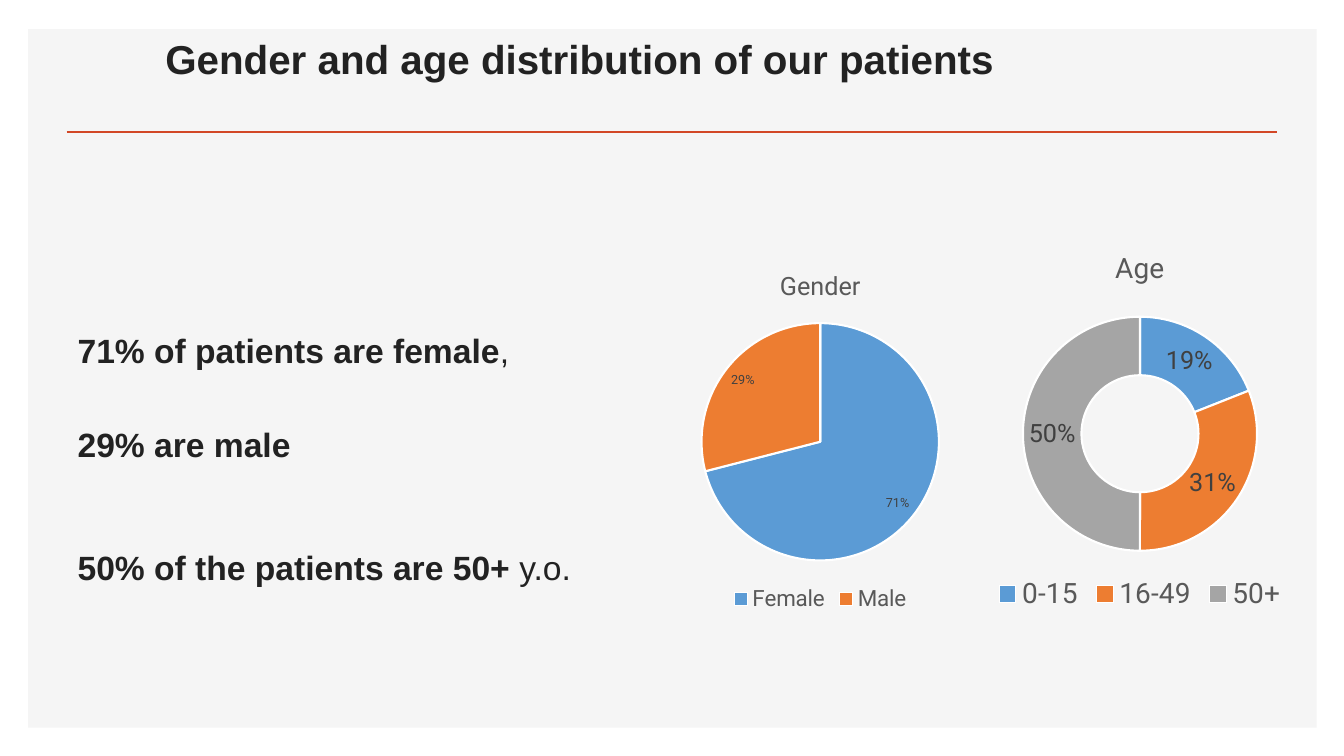
from lxml import etree
from pptx import Presentation
from pptx.chart.data import CategoryChartData
from pptx.dml.color import RGBColor
from pptx.enum.chart import XL_CHART_TYPE as ChartType
from pptx.enum.chart import XL_LABEL_POSITION as LabelPosition
from pptx.enum.chart import XL_LEGEND_POSITION as LegendPosition
from pptx.enum.shapes import MSO_CONNECTOR as Connector
from pptx.enum.shapes import MSO_SHAPE as Shape
from pptx.enum.text import MSO_ANCHOR as Anchor
from pptx.oxml.ns import qn
from pptx.util import Inches, Pt

PANEL = RGBColor(0xF5, 0xF5, 0xF5)
RULE = RGBColor(0xD2, 0x47, 0x26)
INK = RGBColor(0x22, 0x22, 0x22)
BLACK = RGBColor(0, 0, 0)
WHITE = RGBColor(0xFF, 0xFF, 0xFF)
CAPTION = RGBColor(0x59, 0x59, 0x59)
LABEL = RGBColor(0x40, 0x40, 0x40)
SLICES = [
    RGBColor(0x5B, 0x9B, 0xD5),
    RGBColor(0xED, 0x7D, 0x31),
    RGBColor(0xA5, 0xA5, 0xA5),
]

FINDINGS = [
    ("71% of patients are female", ",", 24),
    ("29% are male", "", 45),
    ("50% of the patients are 50+ ", "y.o.", 0),
]
AGE = {
    "title": "Age",
    "kind": ChartType.DOUGHNUT,
    "shares": {"0-15": 0.19, "16-49": 0.31, "50+": 0.5},
    "sizes": {"title": 20, "legend": 20, "labels": 18},
    "label_position": None,
}
GENDER = {
    "title": "Gender",
    "kind": ChartType.PIE,
    "shares": {"Female": 0.71, "Male": 0.29},
    "sizes": {"title": 18, "legend": 16, "labels": 9},
    "label_position": LabelPosition.INSIDE_END,
}


def style_font(font, size, color, name="Arial", bold=False):
    font.color.rgb = color
    for key, value in {"size": Pt(size), "name": name, "bold": bold}.items():
        setattr(font, key, value)


def add_text_frame(slide, box, anchor):
    frame = slide.shapes.add_textbox(*map(Inches, box)).text_frame
    settings = {"word_wrap": True, "vertical_anchor": anchor}
    settings |= {f"margin_{side}": 0 for side in ("left", "top", "right", "bottom")}
    for key, value in settings.items():
        setattr(frame, key, value)
    return frame


def add_backdrop(slide, box):
    left, top, width, _ = box
    panel = slide.shapes.add_shape(Shape.RECTANGLE, *map(Inches, box))
    panel.shadow.inherit = False
    panel.fill.solid()
    panel.fill.fore_color.rgb = PANEL
    panel.line.fill.background()

    rule_ends = (left + 0.38, top + 1.02, left + width - 0.39, top + 1.02)
    rule = slide.shapes.add_connector(Connector.STRAIGHT, *map(Inches, rule_ends))
    rule.line.color.rgb = RULE
    rule.line.width = Pt(2)
    etree.SubElement(rule._element.spPr, qn("a:effectLst"))


def add_heading(slide, box):
    frame = add_text_frame(slide, box, Anchor.MIDDLE)
    heading = frame.paragraphs[0].add_run()
    heading.text = "Gender and age distribution of our patients"
    style_font(heading.font, 28.8, INK, bold=True)


def add_findings(slide, box):
    frame = add_text_frame(slide, box, Anchor.TOP)
    for index, (finding, ending, gap) in enumerate(FINDINGS):
        paragraph = frame.add_paragraph() if index else frame.paragraphs[0]
        paragraph.line_spacing = 1.5
        paragraph.space_after = Pt(gap)
        for words, bold in ((finding, True), (ending, False)):
            if words:
                run = paragraph.add_run()
                run.text = words
                style_font(run.font, 24, INK, bold=bold)


def add_share_chart(slide, box, content):
    shares, sizes = content["shares"], content["sizes"]
    table = CategoryChartData(number_format="0%")
    table.categories = list(shares)
    table.add_series("Series 1", list(shares.values()))
    chart = slide.shapes.add_chart(content["kind"], *map(Inches, box), table).chart
    style_font(chart.font, 10, BLACK, "Roboto")

    chart.has_title = True
    title = chart.chart_title.text_frame.paragraphs[0].add_run()
    title.text = content["title"]
    style_font(title.font, sizes["title"], CAPTION, "Roboto")

    chart.has_legend = True
    chart.legend.position = LegendPosition.BOTTOM
    chart.legend.include_in_layout = False
    style_font(chart.legend.font, sizes["legend"], CAPTION, "Roboto")

    plot = chart.plots[0]
    plot.vary_by_categories = True
    for index in range(len(shares)):
        portion = plot.series[0].points[index].format
        portion.fill.solid()
        portion.fill.fore_color.rgb = SLICES[index]
        portion.line.color.rgb = WHITE
        portion.line.width = Pt(1.5)

    labels = plot.series[0].data_labels
    label_format = {
        "show_value": True,
        "show_percentage": False,
        "number_format": "0%",
        "number_format_is_linked": False,
    }
    if content["label_position"] is not None:
        label_format["position"] = content["label_position"]
    for key, value in label_format.items():
        setattr(labels, key, value)
    style_font(labels.font, sizes["labels"], LABEL, "Roboto")


def main():
    deck = Presentation()
    deck.slide_width, deck.slide_height = Inches(13.33), Inches(7.5)
    slide = deck.slides.add_slide(deck.slide_layouts[6])
    add_backdrop(slide, (0.28, 0.29, 12.78, 6.93))
    add_heading(slide, (1.64, 0.29, 9, 0.57))
    add_findings(slide, (0.77, 3.07, 5.6, 2.9))
    add_share_chart(slide, (9.15, 2.29, 4.31, 3.83), AGE)
    add_share_chart(slide, (5.19, 2.5, 5.89, 3.61), GENDER)
    deck.save("out.pptx")


if __name__ == "__main__":
    main()
